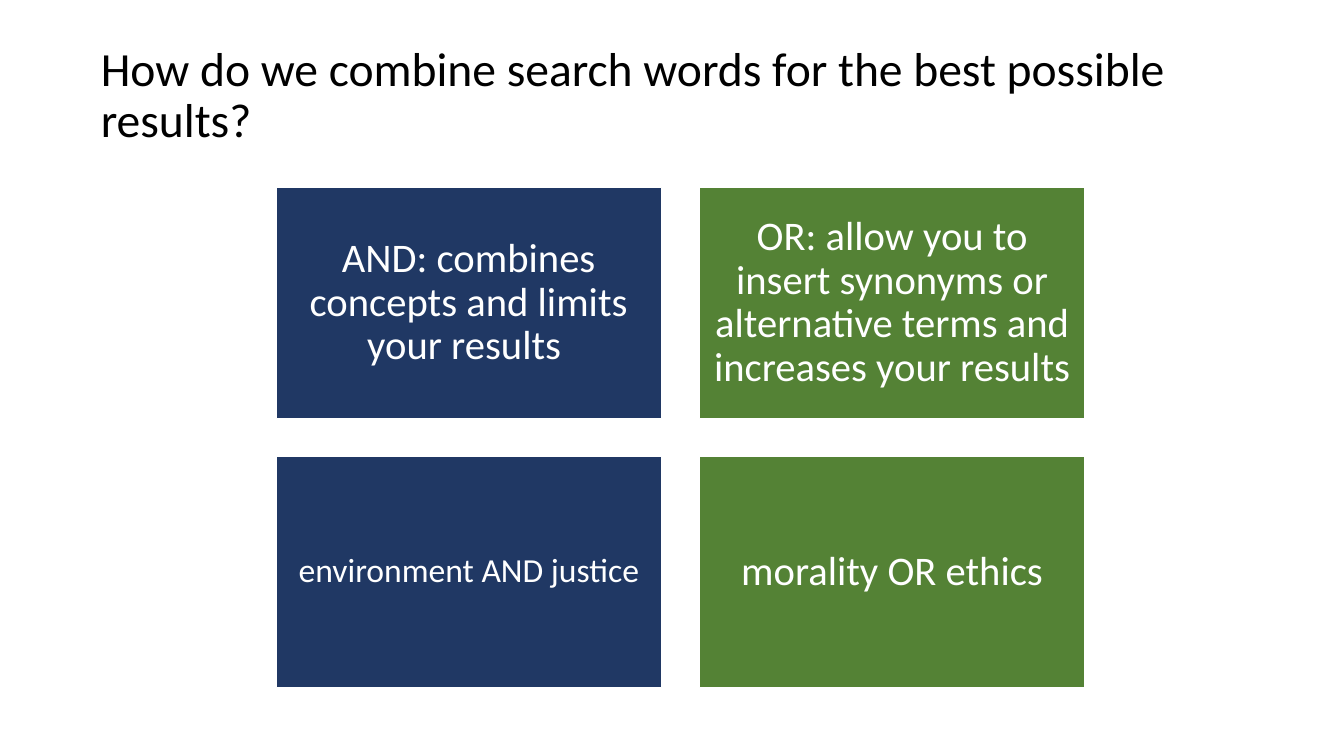
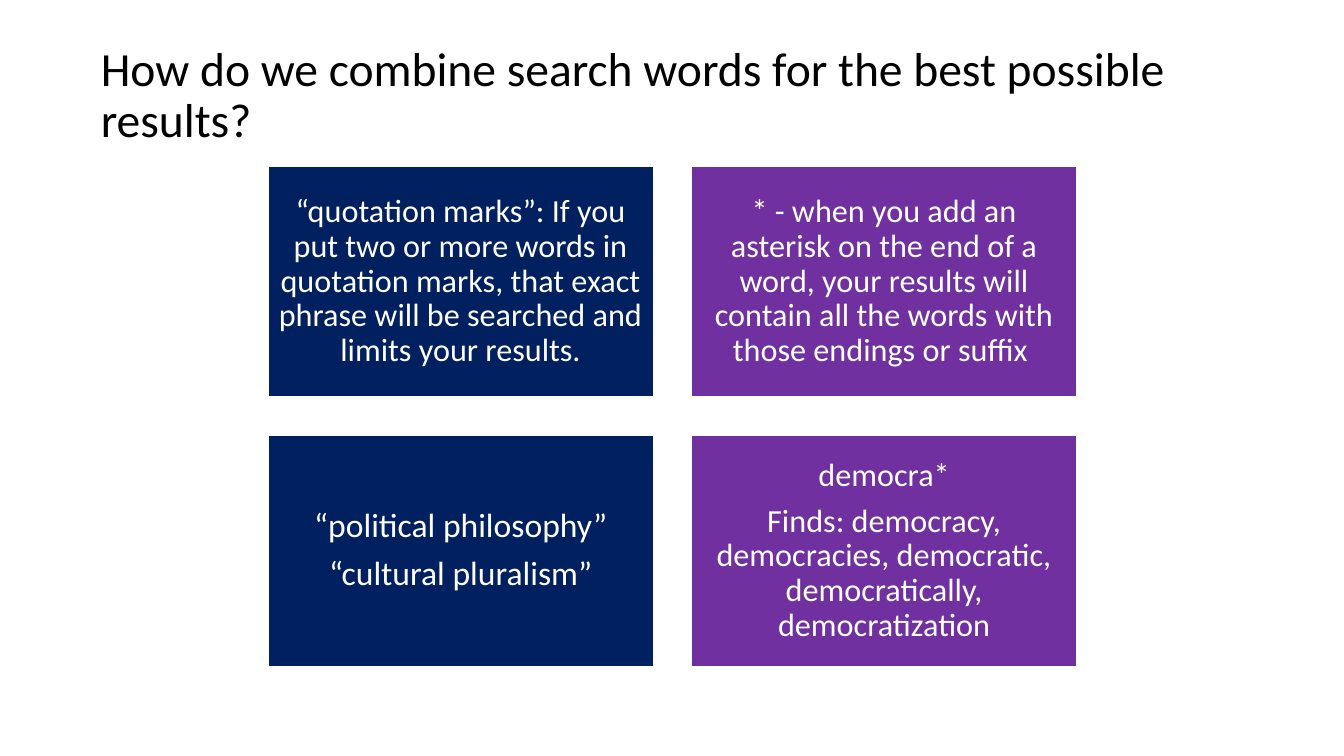
from pptx import Presentation
from pptx.dml.color import RGBColor
from pptx.enum import shapes, text
from pptx.util import Inches, Pt

WIDTH, HEIGHT = 13.33, 7.5
FONT = "Calibri"
LINE_SPACING = 0.9
BLACK = RGBColor(0x00, 0x00, 0x00)
WHITE = RGBColor(0xFF, 0xFF, 0xFF)
SLATE = RGBColor(0x20, 0x38, 0x64)
GREEN = RGBColor(0x54, 0x82, 0x35)
NAVY = RGBColor(0x00, 0x20, 0x60)
PURPLE = RGBColor(0x70, 0x30, 0xA0)

CARD_WIDTH, CARD_HEIGHT, GAP = 3.82, 2.29, 0.38
TITLE = "How do we combine search words for the best possible results?"


def write(box, paragraphs, size, color=WHITE, align=text.PP_ALIGN.CENTER,
          inset=0.1, space_after=0.0):
    """Fill a shape with paragraphs; space_after is a share of the text size."""
    frame = box.text_frame
    frame.word_wrap = True
    frame.vertical_anchor = text.MSO_ANCHOR.MIDDLE
    frame.margin_left = frame.margin_right = Inches(inset)
    frame.margin_top = frame.margin_bottom = Inches(inset)
    for index, words in enumerate(paragraphs):
        para = frame.paragraphs[0] if index == 0 else frame.add_paragraph()
        para.alignment = align
        para.line_spacing = LINE_SPACING
        para.space_after = Pt(size * space_after)
        span = para.add_run()
        span.text = words
        span.font.name = FONT
        span.font.size = Pt(size)
        span.font.color.rgb = color


def add_title(page):
    box = page.shapes.add_textbox(Inches(0.92), Inches(0.37),
                                  Inches(11.49), Inches(1.18))
    write(box, [TITLE], size=34, color=BLACK, align=text.PP_ALIGN.LEFT, inset=0.08)


def add_card(page, left, top, fill, paragraphs, size):
    card = page.shapes.add_shape(shapes.MSO_SHAPE.RECTANGLE, Inches(left), Inches(top),
                                 Inches(CARD_WIDTH), Inches(CARD_HEIGHT))
    card.shadow.inherit = False
    card.fill.solid()
    card.fill.fore_color.rgb = fill
    card.line.color.rgb = WHITE
    card.line.width = Pt(1)
    write(card, paragraphs, size, inset=0.12 if size > 24 else 0.1, space_after=0.35)


def add_card_page(deck, left, top, column_fills, rows):
    """Add a titled page with a grid of cards, one colour for each column."""
    page = deck.slides.add_slide(deck.slide_layouts[6])
    add_title(page)
    for row, cards in enumerate(rows):
        for column, (size, *paragraphs) in enumerate(cards):
            add_card(page, left + column * (CARD_WIDTH + GAP),
                     top + row * (CARD_HEIGHT + GAP),
                     column_fills[column], paragraphs, size)


def main():
    deck = Presentation()
    deck.slide_width, deck.slide_height = Inches(WIDTH), Inches(HEIGHT)
    add_card_page(deck, 2.74, 1.86, (SLATE, GREEN), [
        [(29, "AND: combines concepts and limits your results "),
         (29, "OR: allow you to insert synonyms or alternative terms "
              "and increases your results")],
        [(24, "environment AND justice"),
         (29, "morality OR ethics")],
    ])
    add_card_page(deck, 2.66, 1.65, (NAVY, PURPLE), [
        [(23, "“quotation marks”: If you put two or more words in quotation marks, "
              "that exact phrase will be searched and limits your results."),
         (23, "* - when you add an asterisk on the end of a word, your results "
              "will contain all the words with those endings or suffix ")],
        [(24, "“political philosophy”", "“cultural pluralism”"),
         (23, "democra*", "Finds: democracy, democracies, democratic, "
              "democratically, democratization")],
    ])
    deck.save("out.pptx")


if __name__ == "__main__":
    main()
